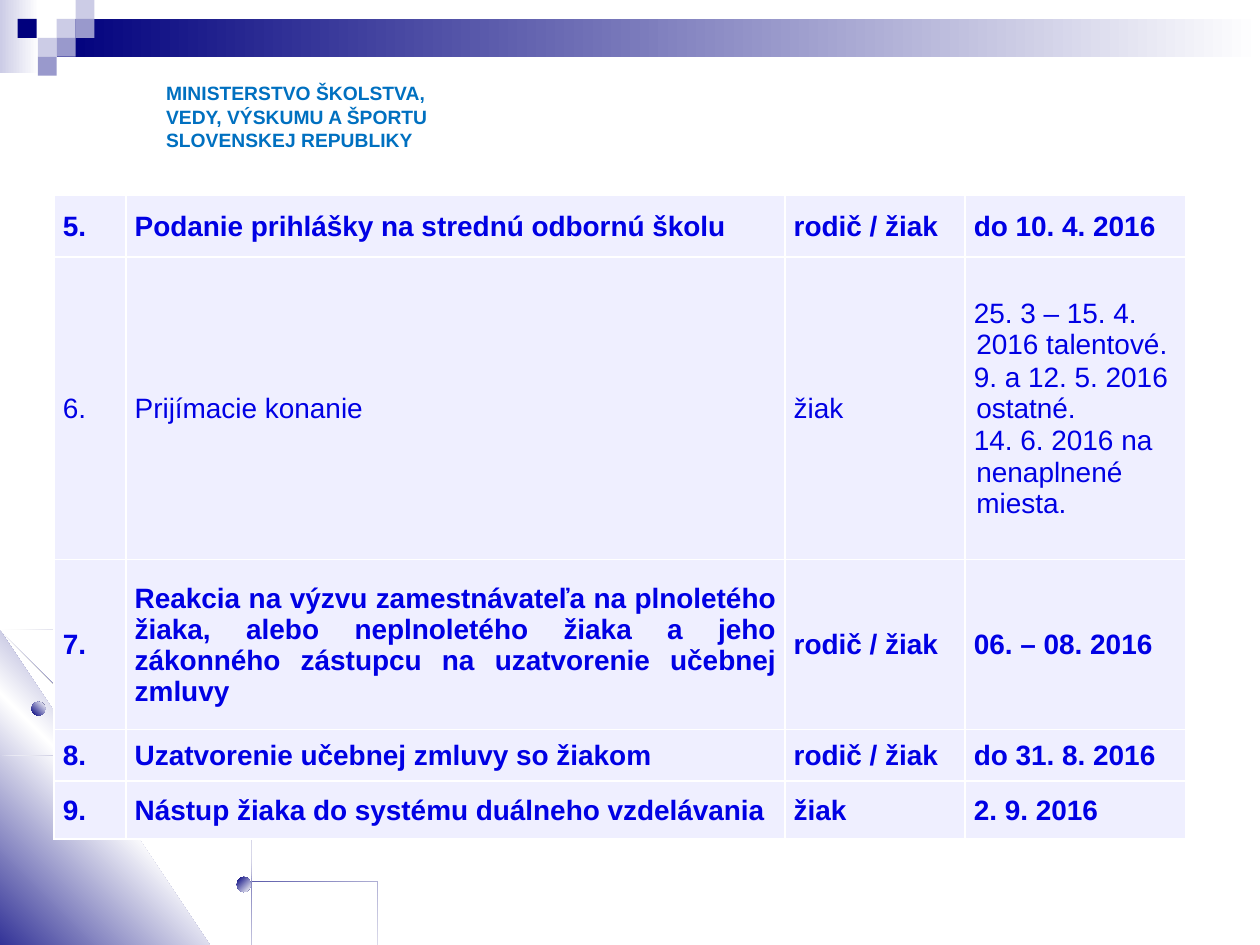
from lxml.etree import SubElement
from pptx import Presentation
from pptx.dml.color import RGBColor
from pptx.enum.shapes import MSO_SHAPE
from pptx.enum.text import MSO_ANCHOR, PP_ALIGN
from pptx.oxml.ns import qn
from pptx.util import Inches, Pt

# Content
MINISTRY = ["MINISTERSTVO ŠKOLSTVA,", "VEDY, VÝSKUMU A ŠPORTU", "SLOVENSKEJ REPUBLIKY"]
ROWS = [
    ("5.", "Podanie prihlášky na strednú odbornú školu", "rodič / žiak", "do 10. 4. 2016"),
    ("6.", "Prijímacie konanie", "žiak",
     "25. 3 – 15. 4. 2016 talentové.\n9. a 12. 5. 2016 ostatné.\n"
     "14. 6. 2016 na nenaplnené miesta."),
    ("7.", "Reakcia na výzvu zamestnávateľa na plnoletého žiaka, alebo neplnoletého žiaka "
     "a jeho zákonného zástupcu na uzatvorenie učebnej zmluvy", "rodič / žiak",
     "06. – 08. 2016"),
    ("8.", "Uzatvorenie učebnej zmluvy so žiakom", "rodič / žiak", "do 31. 8. 2016"),
    ("9.", "Nástup žiaka do systému duálneho vzdelávania", "žiak", "2. 9. 2016"),
]
REGULAR_ROW, WRAPPED_ROW = 1, 2
COL_WIDTHS = [0.57, 5.23, 1.43, 1.75]
ROW_HEIGHTS = [0.49, 2.4, 1.35, 0.41, 0.46]
HANGING = [0.59, 0.59, 0.59, 0.02]

# Colours and gradients
NAVY, LILAC, VIOLET, WHITE = "00007D", "CCCCE6", "9999CC", "FFFFFF"
TEXT_BLUE, CELL, MINISTRY_BLUE = "0000E4", "EFEFFF", "0070C0"
SHEEN = ([WHITE, NAVY, WHITE], 45)

# Top band and mosaic: left, top, width, height, colour or (stops, angle)
TILE = 0.15
BANDS = [
    (0, 0, 0.31, 0.58, ([LILAC, WHITE], 0)),
    (0.45, 0.15, 9.55, 0.3, ([NAVY, WHITE], 0)),
]
TILES = [(0.45, 0.15, LILAC), (0.6, 0, LILAC), (0.6, 0.15, VIOLET), (0.3, 0.3, LILAC),
         (0.14, 0.15, NAVY), (0.45, 0.3, VIOLET), (0.3, 0.45, VIOLET)]
DOTS = [
    (0.25, 5.57, 0.11, 0.11, ([NAVY, WHITE], 315)),
    (1.88, 6.96, 0.11, 0.12, ([NAVY, WHITE], 45)),
]

# Corner outlines: points and gradient
CORNER = [
    ([(0.4, 5.31), (0.2, 5.26), (0, 5.23), (0, 5.24), (0.2, 5.28), (0.4, 5.32),
      (0.68, 5.42), (0.95, 5.53), (1.22, 5.69), (1.47, 5.86), (1.7, 6.05), (1.91, 6.27),
      (2.1, 6.51), (2.28, 6.77), (2.38, 6.95), (2.47, 7.13), (2.54, 7.31), (2.61, 7.5),
      (2.62, 7.5), (2.56, 7.31), (2.48, 7.13), (2.39, 6.95), (2.29, 6.77), (2.12, 6.5),
      (1.92, 6.26), (1.7, 6.04), (1.48, 5.84), (1.23, 5.67), (0.96, 5.53), (0.69, 5.4)],
     SHEEN),
    ([(2.27, 7.5), (0, 7.5), (0, 5.16)], ([NAVY, WHITE, NAVY], 315)),
    ([(2.01, 7.24), (2.07, 7.37), (2.12, 7.5), (2.14, 7.5), (2.09, 7.36), (2.02, 7.23),
      (1.88, 6.97), (1.71, 6.71), (1.51, 6.46), (1.3, 6.24), (1.07, 6.05), (0.82, 5.88),
      (0.56, 5.73), (0.29, 5.61), (0, 5.51), (0, 5.53), (0.27, 5.62), (0.55, 5.74),
      (0.81, 5.9), (1.06, 6.06), (1.29, 6.26), (1.5, 6.48), (1.7, 6.72), (1.87, 6.98)],
     SHEEN),
    ([(0, 5.27), (0, 5.29), (0.26, 5.38), (0.52, 5.51), (0.77, 5.65), (1, 5.83),
      (1.22, 6.02), (1.43, 6.23), (1.6, 6.46), (1.78, 6.71), (1.88, 6.9), (1.98, 7.1),
      (2.06, 7.3), (2.12, 7.49), (2.14, 7.49), (2.07, 7.29), (1.99, 7.09), (1.89, 6.89),
      (1.79, 6.7), (1.62, 6.44), (1.44, 6.22), (1.23, 6), (1.01, 5.81), (0.79, 5.64),
      (0.54, 5.5), (0.27, 5.37)], SHEEN),
]


def rgb(value):
    return RGBColor.from_string(value)


def paint(sp, fill):
    sp.shadow.inherit = False
    sp.line.fill.background()
    if isinstance(fill, str):
        sp.fill.solid()
        sp.fill.fore_color.rgb = rgb(fill)
        return
    colors, angle = fill
    sp.fill.gradient()
    sp.fill.gradient_angle = -angle % 360  # python-pptx counts anticlockwise
    stops = sp.fill._fill._gradFill.find(qn("a:gsLst"))
    for old in list(stops):
        stops.remove(old)
    for i, color in enumerate(colors):
        stop = SubElement(stops, qn("a:gs"), pos=str(100000 * i // (len(colors) - 1)))
        SubElement(stop, qn("a:srgbClr"), val=color)


def add_preset(shapes, kind, left, top, width, height, fill):
    sp = shapes.add_shape(kind, Inches(left), Inches(top), Inches(width), Inches(height))
    paint(sp, fill)


def add_outline(shapes, points, fill):
    builder = shapes.build_freeform(*points[0], scale=Inches(1))
    builder.add_line_segments(points[1:], close=True)
    paint(builder.convert_to_shape(), fill)


def write(tf, lines, color, **font):
    tf.text = "\n".join(lines)
    for p in tf.paragraphs:
        for r in p.runs:
            r.font.color.rgb = rgb(color)
            for name, value in {"name": "Arial", **font}.items():
                setattr(r.font, name, value)


def add_borders(cell):
    tc_pr = cell._tc.get_or_add_tcPr()
    for i, side in enumerate(("lnL", "lnR", "lnT", "lnB")):
        ln = tc_pr.makeelement(qn(f"a:{side}"), {"w": str(Pt(1))})
        SubElement(SubElement(ln, qn("a:solidFill")), qn("a:srgbClr"), val=WHITE)
        tc_pr.insert(i, ln)


def format_cell(cell, text, row, col):
    cell.fill.solid()
    cell.fill.fore_color.rgb = rgb(CELL)
    margins = {"margin_left": 0.07, "margin_top": 0.01, "margin_right": 0.07, "margin_bottom": 0}
    for name, value in margins.items():
        setattr(cell, name, Inches(value))
    cell.vertical_anchor = MSO_ANCHOR.MIDDLE
    write(cell.text_frame, text.split("\n"), TEXT_BLUE, size=Pt(16), bold=row != REGULAR_ROW)
    for i, p in enumerate(cell.text_frame.paragraphs):
        p.alignment = PP_ALIGN.JUSTIFY if col == 1 else PP_ALIGN.LEFT
        if i:
            p.space_before = Pt(0.8)
        if (row, col) != (WRAPPED_ROW, 1):
            p_pr = p._p.get_or_add_pPr()
            p_pr.set("marL", str(Inches(HANGING[col])))
            p_pr.set("indent", str(-Inches(HANGING[col])))
    add_borders(cell)


def main():
    prs = Presentation()
    prs.slide_width, prs.slide_height = Inches(10), Inches(7.5)
    shapes = prs.slides.add_slide(prs.slide_layouts[6]).shapes

    # Decoration
    for band in BANDS:
        add_preset(shapes, MSO_SHAPE.RECTANGLE, *band)
    for left, top, color in TILES:
        add_preset(shapes, MSO_SHAPE.RECTANGLE, left, top, TILE, TILE, color)
    for points, fill in CORNER:
        add_outline(shapes, points, fill)
    for dot in DOTS:
        add_preset(shapes, MSO_SHAPE.OVAL, *dot)

    # Ministry name
    tf = shapes.add_textbox(Inches(1.22), Inches(0.6), Inches(2.44), Inches(0.66)).text_frame
    tf.word_wrap = True
    write(tf, MINISTRY, MINISTRY_BLUE, size=Pt(11), bold=True)

    # Schedule table
    table = shapes.add_table(len(ROWS), len(COL_WIDTHS), Inches(0.43), Inches(1.55),
                             Inches(sum(COL_WIDTHS)), Inches(sum(ROW_HEIGHTS))).table
    for column, width in zip(table.columns, COL_WIDTHS):
        column.width = Inches(width)
    for row, height in zip(table.rows, ROW_HEIGHTS):
        row.height = Inches(height)
    for i, texts in enumerate(ROWS):
        for j, text in enumerate(texts):
            format_cell(table.cell(i, j), text, i, j)

    prs.save("out.pptx")


if __name__ == "__main__":
    main()
